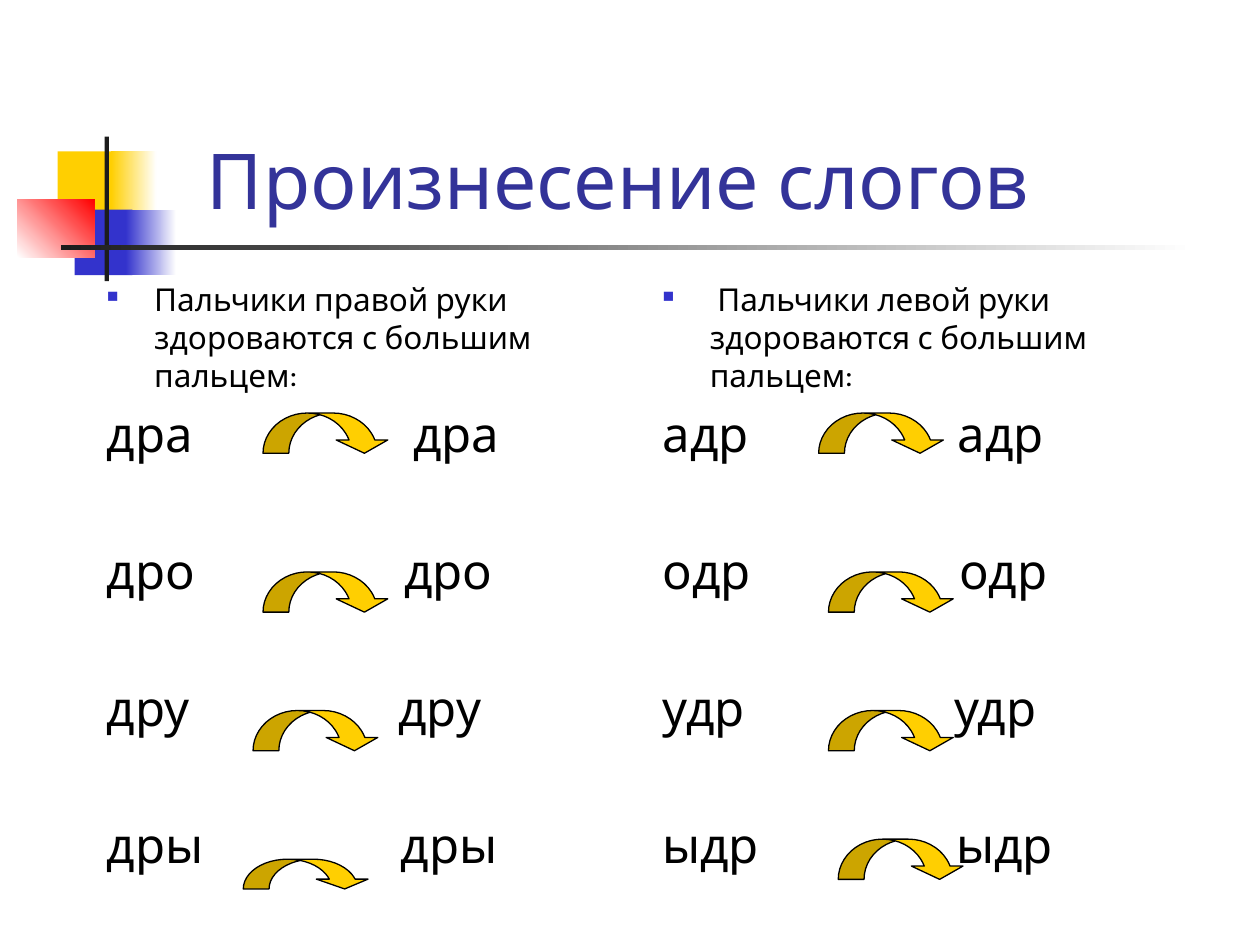
from lxml.etree import SubElement
from pptx import Presentation
from pptx.dml.color import RGBColor
from pptx.enum.shapes import MSO_SHAPE
from pptx.enum.text import MSO_ANCHOR
from pptx.oxml.ns import qn
from pptx.util import Pt

FONT = "Karla"
YELLOW, BLUE, RED = "FFCF01", "3333CC", "FF0000"
WHITE, BLACK, DARK, TITLE_BLUE = "FFFFFF", "000000", "1C1C1C", "333399"
HANGING = 27

# Each row: syllable and the tab position of its repetition
RIGHT_HAND = [("дра", 175), ("дро", 170), ("дру", 166.5), ("дры", 168)]
LEFT_HAND = [("адр", 168.6), ("одр", 169.6), ("удр", 166.6), ("ыдр", 168)]

# Left, top and height of the arrows
ARROWS = [
    (150.3, 236, 23), (150.3, 326.8, 23), (144.6, 406, 23), (139, 491, 17),
    (467.8, 236, 23), (473.4, 326.8, 23), (473.4, 406, 23), (479, 479.5, 23),
]


def color(hex_code):
    return RGBColor.from_string(hex_code)


def write(paragraph, text, size=28, ink=BLACK, before=0):
    paragraph.space_before = Pt(before)
    paragraph.line_spacing = 1.0
    run = paragraph.add_run()
    run.text = text
    run.font.name = FONT
    run.font.size = Pt(size)
    run.font.color.rgb = color(ink)


def add_bullet(paragraph):
    props = paragraph._p.get_or_add_pPr()
    props.set("marL", str(Pt(HANGING)))
    props.set("indent", str(-Pt(HANGING)))
    bullet_color = SubElement(props, qn("a:buClr"))
    SubElement(bullet_color, qn("a:srgbClr"), val=BLUE)
    SubElement(props, qn("a:buSzPct"), val="50000")
    SubElement(props, qn("a:buChar"), char="■")


def add_tab(paragraph, position):
    props = paragraph._p.get_or_add_pPr()
    tabs = SubElement(props, qn("a:tabLst"))
    SubElement(tabs, qn("a:tab"), pos=str(Pt(position)), algn="l")


def add_shape(slide, kind, left, top, width, height, fill):
    shape = slide.shapes.add_shape(kind, Pt(left), Pt(top), Pt(width), Pt(height))
    shape.shadow.inherit = False
    shape.fill.solid()
    shape.fill.fore_color.rgb = color(fill)
    shape.line.fill.background()
    return shape


def add_fade(slide, left, top, width, height, start, end, angle=0):
    block = add_shape(slide, MSO_SHAPE.RECTANGLE, left, top, width, height, start)
    block.fill.gradient()
    block.fill.gradient_angle = angle
    for stop, shade in zip(block.fill.gradient_stops, (start, end)):
        stop.color.rgb = color(shade)


def add_ornament(slide):
    rectangle = MSO_SHAPE.RECTANGLE
    add_shape(slide, rectangle, 33, 86.5, 34.5, 37.5, YELLOW)
    add_fade(slide, 63.5, 86.5, 26, 37.5, YELLOW, WHITE)
    add_shape(slide, rectangle, 42.7, 119.8, 33, 37.5, BLUE)
    add_fade(slide, 72, 119.8, 28.8, 37.5, BLUE, WHITE)
    add_fade(slide, 10, 113.8, 44, 33.3, WHITE, RED, angle=45)
    add_shape(slide, rectangle, 59.8, 78, 2.5, 82.7, DARK)
    add_fade(slide, 34.8, 140.2, 648, 2.5, DARK, WHITE)


def add_title(slide, text):
    title = slide.shapes.title
    title.left, title.top, title.width, title.height = (
        Pt(90.7), Pt(17), Pt(613.5), Pt(115.2))
    frame = title.text_frame
    frame.vertical_anchor = MSO_ANCHOR.BOTTOM
    frame.margin_left = Pt(27.5)
    heading = frame.paragraphs[0]
    heading._p.get_or_add_pPr().set("algn", "l")
    write(heading, text, size=44, ink=TITLE_BLUE)


def add_column(slide, left, intro, rows):
    box = slide.shapes.add_textbox(Pt(left), Pt(156.5), Pt(300), Pt(357))
    frame = box.text_frame
    frame.word_wrap = True
    write(frame.paragraphs[0], intro, size=18, before=3.6)
    add_bullet(frame.paragraphs[0])
    for index, (syllable, repeat_at) in enumerate(rows):
        paragraph = frame.add_paragraph()
        write(paragraph, f"{syllable}\t{syllable}", before=44.7 if index else 5.6)
        add_tab(paragraph, repeat_at)


def add_arrow(slide, left, top, height):
    arrow = add_shape(slide, MSO_SHAPE.CURVED_DOWN_ARROW, left, top, 72.7, height, YELLOW)
    arrow.line.color.rgb = color(BLACK)
    arrow.line.width = Pt(0.75)
    # Keep the shaft and head equally wide whatever the height
    arrow.adjustments[0] = 14.75 / height
    arrow.adjustments[1] = 29.5 / height
    arrow.adjustments[2] = 0.33


def main():
    prs = Presentation()
    prs.slide_width, prs.slide_height = Pt(720), Pt(540)
    slide = prs.slides.add_slide(prs.slide_layouts[5])
    add_ornament(slide)
    add_title(slide, "Произнесение слогов")
    # One column of syllables for each hand
    add_column(slide, 54, "Пальчики правой руки здороваются с большим пальцем:", RIGHT_HAND)
    add_column(slide, 371.5, " Пальчики левой руки здороваются с большим пальцем:", LEFT_HAND)
    for place in ARROWS:
        add_arrow(slide, *place)
    prs.save("out.pptx")


if __name__ == "__main__":
    main()
